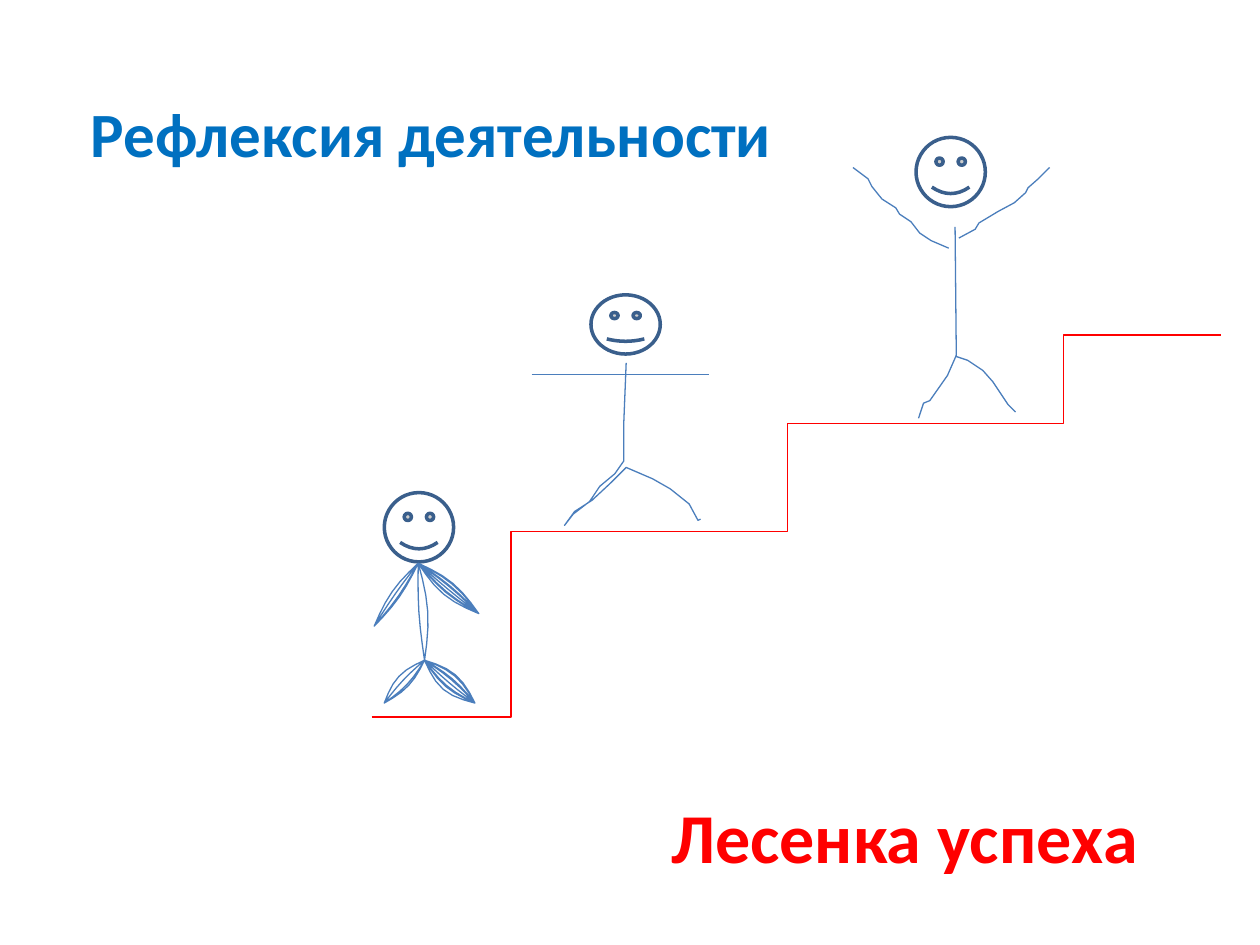
from math import hypot, pi, sin

from lxml.etree import SubElement
from pptx import Presentation
from pptx.dml.color import RGBColor
from pptx.enum.shapes import MSO_CONNECTOR as Connector, MSO_SHAPE as Shape
from pptx.enum.text import MSO_ANCHOR as Anchor, PP_ALIGN as Align
from pptx.oxml.ns import qn
from pptx.util import Inches, Pt

TITLE_BLUE = RGBColor(0x00, 0x70, 0xC0)
RED = RGBColor(0xFF, 0x00, 0x00)
WHITE = RGBColor(0xFF, 0xFF, 0xFF)
FACE_BLUE = RGBColor(0x3A, 0x5F, 0x8C)
LIMB_BLUE = RGBColor(0x4B, 0x7E, 0xBC)

# Each stair: lower left end, upper right end
STAIRS = [
    ((2.95, 5.69), (5.16, 4.22)),
    ((5, 4.22), (7.5, 3.36)),
    ((7.19, 3.36), (9.69, 2.66)),
]

# Each face: left, top, width, height, curve of the mouth
FACES = [
    (3.05, 3.91, 0.55, 0.55, 0.05),
    (4.69, 2.34, 0.55, 0.47, 0.02),
    (7.27, 1.09, 0.55, 0.55, 0.05),
]

STRAIGHT_LIMBS = [
    ((4.22, 2.97), (5.63, 2.97)),
    ((7.58, 1.8), (7.59, 2.83)),
]

# Low figure, drawn over and over: start, end, strokes, widest bulge
NECK, HIP = (3.32, 4.47), (3.37, 5.24)
SCRIBBLES = [
    (NECK, HIP, 1, 0.02),
    (HIP, (3.05, 5.58), 4, 0.06),
    (HIP, (3.77, 5.58), 8, 0.08),
    (HIP, NECK, 1, 0.05),
    (NECK, (2.97, 4.97), 4, 0.04),
    (NECK, (3.8, 4.87), 8, 0.06),
]

MIDDLE_FIGURE_BODY = [
    (4.97, 2.88), (4.95, 3.38), (4.95, 3.66), (4.88, 3.76), (4.76, 3.86), (4.68, 3.98),
    (4.55, 4.08), (4.48, 4.17), (4.56, 4.06), (4.7, 3.97), (4.85, 3.83), (4.97, 3.71),
    (5.18, 3.8), (5.32, 3.88), (5.47, 4), (5.54, 4.13), (5.56, 4.12),
]
TOP_FIGURE_LIMBS = [
    [(7.61, 1.89), (7.74, 1.82), (7.77, 1.77), (7.92, 1.68), (8.05, 1.61),
     (8.14, 1.53), (8.16, 1.49), (8.24, 1.42), (8.33, 1.33)],
    [(7.53, 1.97), (7.39, 1.91), (7.3, 1.85), (7.23, 1.76), (7.14, 1.7),
     (7.11, 1.65), (7, 1.58), (6.92, 1.48), (6.89, 1.42), (6.77, 1.33)],
    [(7.59, 2.82), (7.52, 2.98), (7.38, 3.18), (7.33, 3.2), (7.29, 3.32)],
    [(7.59, 2.83), (7.68, 2.86), (7.8, 2.94), (7.88, 3.03), (8, 3.21), (8.06, 3.27)],
]


def set_text(shape, text, *, size, color, font="Calibri", bold=True):
    frame = shape.text_frame
    frame.word_wrap = True
    frame.vertical_anchor = Anchor.TOP
    paragraph = frame.paragraphs[0]
    paragraph.alignment = Align.LEFT
    run = paragraph.add_run()
    run.text = text
    run.font.name = font
    run.font.size = Pt(size)
    run.font.bold = bold
    run.font.color.rgb = color


def set_line(shape, color, width=0.75):
    shape.line.color.rgb = color
    shape.line.width = Pt(width)


def add_line(slide, kind, start, end, color):
    ends = [Inches(value) for value in (*start, *end)]
    connector = slide.shapes.add_connector(kind, *ends)
    set_line(connector, color)
    SubElement(connector._element.spPr, qn("a:effectLst"))


def add_face(slide, left, top, width, height, smile):
    box = [Inches(value) for value in (left, top, width, height)]
    face = slide.shapes.add_shape(Shape.SMILEY_FACE, *box)
    face.adjustments[0] = smile
    face.shadow.inherit = False
    face.fill.solid()
    face.fill.fore_color.rgb = WHITE
    set_line(face, FACE_BLUE, 2)


def scribble(start, end, strokes, bulge, steps=6):
    """Return points that run to and fro along a limb, bent a little less each time."""
    (x, y), (end_x, end_y) = start, end
    run, rise = end_x - x, end_y - y
    length = hypot(run, rise)
    points = []
    for stroke in range(strokes):
        side = bulge * (1 - stroke / strokes)
        for step in range(steps + 1):
            along = step / steps if stroke % 2 == 0 else 1 - step / steps
            bend = side * sin(pi * along) * (-1) ** (stroke // 2 + stroke)
            points.append((x + run * along - rise / length * bend,
                           y + rise * along + run / length * bend))
    return points


def add_drawn_limb(slide, points):
    start, *rest = [(Inches(x), Inches(y)) for x, y in points]
    builder = slide.shapes.build_freeform(*start)
    builder.add_line_segments(rest, close=False)
    limb = builder.convert_to_shape()
    limb.shadow.inherit = False
    limb.fill.background()
    set_line(limb, LIMB_BLUE)


def main():
    presentation = Presentation()
    presentation.slide_width = Inches(10)
    presentation.slide_height = Inches(7.5)
    slide = presentation.slides.add_slide(presentation.slide_layouts[5])

    title = slide.shapes.title
    title.left, title.top = Inches(0.62), Inches(0.7)
    title.width, title.height = Inches(6.09), Inches(1.31)
    set_text(title, "Рефлексия деятельности", size=36, color=TITLE_BLUE)

    for start, end in STAIRS:
        add_line(slide, Connector.ELBOW, start, end, RED)
    for face in FACES:
        add_face(slide, *face)
    for start, end in STRAIGHT_LIMBS:
        add_line(slide, Connector.STRAIGHT, start, end, LIMB_BLUE)

    low_figure_body = [point for limb in SCRIBBLES for point in scribble(*limb)]
    for points in [low_figure_body, MIDDLE_FIGURE_BODY, *TOP_FIGURE_LIMBS]:
        add_drawn_limb(slide, points)

    caption = slide.shapes.add_textbox(Inches(5.23), Inches(6.25), Inches(4.53), Inches(0.77))
    set_text(caption, "Лесенка успеха", size=40, color=RED)

    presentation.save("out.pptx")


if __name__ == "__main__":
    main()
